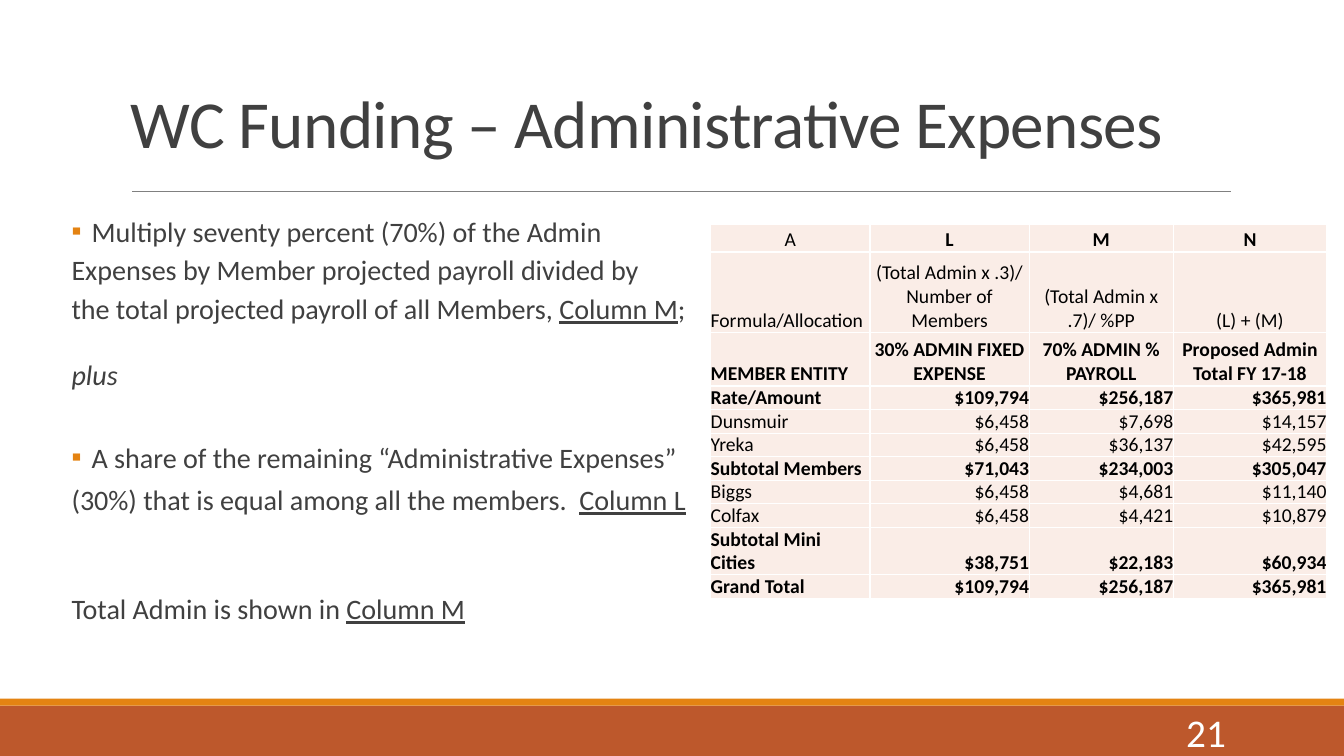
from dataclasses import dataclass

from lxml import etree
from pptx import Presentation, util as u
from pptx.dml.color import RGBColor
from pptx.enum import shapes, text
from pptx.oxml import ns


@dataclass(frozen=True)
class Theme:
    font: str = "Calibri"
    ink: str = "404040"
    black: str = "000000"
    white: str = "FFFFFF"
    rule: str = "808080"
    rust: str = "BD582C"
    orange: str = "E48312"
    blush: str = "FAEDE7"
    title_size: float = 48
    body_size: float = 20.1
    table_size: float = 14
    number_size: float = 28


THEME = Theme()
WIDTH, HEIGHT = u.Inches(13.333), u.Inches(7.5)
ALIGN = text.PP_ALIGN
ANCHOR = text.MSO_ANCHOR

COLUMN_SHARES = (11.85, 11.85, 10.73, 11.4)
HEADER_ROW_SHARES = (3.6, 10.67, 7.07)
DATA_ROW_SHARE = 1.73

ALLOCATION = (
    (False, ("A", "L", "M", "N")),
    (False, ("Formula/Allocation", "(Total Admin x .3)/ Number of Members",
             "(Total Admin x .7)/ %PP", "(L) + (M)")),
    (True, ("MEMBER ENTITY", "30% ADMIN FIXED EXPENSE",
            "70% ADMIN % PAYROLL", "Proposed Admin Total FY 17-18")),
    (True, ("Rate/Amount", "$109,794", "$256,187", "$365,981")),
    (False, ("Dunsmuir", "$6,458", "$7,698", "$14,157")),
    (False, ("Yreka", "$6,458", "$36,137", "$42,595")),
    (True, ("Subtotal Members", "$71,043", "$234,003", "$305,047")),
    (False, ("Biggs", "$6,458", "$4,681", "$11,140")),
    (False, ("Colfax", "$6,458", "$4,421", "$10,879")),
    (True, ("Subtotal Mini Cities", "$38,751", "$22,183", "$60,934")),
    (True, ("Grand Total", "$109,794", "$256,187", "$365,981")),
)

EXPLANATION = (
    (True, 0.9, 2, (("Multiply seventy percent (70%) of the Admin", ""),)),
    (False, 0.9, 2, (("Expenses by Member projected payroll divided by", ""),)),
    (False, 0.9, 2, (("the total projected payroll of all Members, ", ""),
                     ("Column M", "underline"), (";", ""))),
    (False, 0.7, 25, (("plus", "italic"),)),
    (True, 1.0, 32, (("A share of the remaining “Administrative Expenses”", ""),)),
    (False, 1.0, 2, (("(30%) that is equal among all the members.  ", ""),
                     ("Column L", "underline"))),
    (False, 0.7, 56, (("Total Admin is shown in ", ""),
                      ("Column M", "underline"))),
)


def across(share):
    return round(WIDTH * share / 100)


def down(share):
    return round(HEIGHT * share / 100)


def place(left, top, width, height):
    return across(left), down(top), across(width), down(height)


def colour(value):
    return RGBColor.from_string(value)


def add_span(para, words, size, tint, style=""):
    span = para.add_run()
    span.text = words
    span.font.name = THEME.font
    span.font.size = u.Pt(size)
    span.font.color.rgb = colour(tint)
    if style:
        setattr(span.font, style, True)
    return span


def add_box(page, area, anchor):
    box = page.shapes.add_textbox(*place(*area))
    box.text_frame.word_wrap = True
    box.text_frame.vertical_anchor = anchor
    return box.text_frame


def add_band(page, area, tint):
    band = page.shapes.add_shape(shapes.MSO_SHAPE.RECTANGLE, *place(*area))
    band.shadow.inherit = False
    band.fill.solid()
    band.fill.fore_color.rgb = colour(tint)
    band.line.fill.background()


def add_rule(page, start, end, level):
    rule = page.shapes.add_connector(
        shapes.MSO_CONNECTOR.STRAIGHT,
        across(start), down(level), across(end), down(level))
    rule.line.color.rgb = colour(THEME.rule)
    rule.line.width = u.Pt(0.5)
    etree.SubElement(rule.element.spPr, ns.qn("a:effectLst"))


def add_title(page, words):
    para = add_box(page, (9, 6.67, 82.5, 15.47), ANCHOR.BOTTOM).paragraphs[0]
    para.line_spacing = 0.85
    span = add_span(para, words, THEME.title_size, THEME.ink)
    span.font._element.set("spc", "-50")


def indent(para, bulleted):
    properties = para._p.get_or_add_pPr()
    properties.set("marL", str(u.Inches(0.42 if bulleted else 0.22)))
    properties.set("indent", str(u.Inches(-0.2 if bulleted else 0)))
    if bulleted:
        tint = etree.SubElement(properties, ns.qn("a:buClr"))
        etree.SubElement(tint, ns.qn("a:srgbClr"), val=THEME.orange)
        etree.SubElement(properties, ns.qn("a:buFont"), typeface=THEME.font)
        etree.SubElement(properties, ns.qn("a:buChar"), char="▪")


def add_explanation(page):
    frame = add_box(page, (3.67, 24.93, 68.33, 61.33), ANCHOR.TOP)
    frame.margin_left = frame.margin_right = 0
    frame.margin_top = down(3.87)
    for index, (bulleted, spacing, before, spans) in enumerate(EXPLANATION):
        para = frame.add_paragraph() if index else frame.paragraphs[0]
        para.line_spacing = spacing
        para.space_before = u.Pt(before if index else 0)
        para.space_after = u.Pt(4)
        indent(para, bulleted)
        for words, style in spans:
            add_span(para, words, THEME.body_size, THEME.ink, style)


def style_cell(cell):
    cell.margin_left = cell.margin_right = 0
    cell.margin_top = cell.margin_bottom = 0
    cell.vertical_anchor = ANCHOR.BOTTOM
    properties = cell._tc.get_or_add_tcPr()
    for side in ("lnL", "lnR", "lnT", "lnB"):
        border = etree.SubElement(properties, ns.qn(f"a:{side}"), w=str(u.Pt(1)))
        fill = etree.SubElement(border, ns.qn("a:solidFill"))
        etree.SubElement(fill, ns.qn("a:srgbClr"), val=THEME.white)
    cell.fill.solid()
    cell.fill.fore_color.rgb = colour(THEME.blush)


def cell_alignment(row, column):
    if row == 0 or (column and row < len(HEADER_ROW_SHARES)):
        return ALIGN.CENTER
    return ALIGN.RIGHT if column else ALIGN.LEFT


def add_allocation(page):
    area = place(52.88, 29.73, sum(COLUMN_SHARES), 49.33)
    holder = page.shapes.add_table(len(ALLOCATION), len(COLUMN_SHARES), *area)
    table = holder.table
    table.first_row = table.horz_banding = False
    for column, share in zip(table.columns, COLUMN_SHARES):
        column.width = across(share)
    data_rows = len(ALLOCATION) - len(HEADER_ROW_SHARES)
    row_shares = HEADER_ROW_SHARES + (DATA_ROW_SHARE,) * data_rows
    for row, share in zip(table.rows, row_shares):
        row.height = down(share)
    holder.height = area[3]
    for row, (bold, entries) in enumerate(ALLOCATION):
        for column, words in enumerate(entries):
            cell = table.cell(row, column)
            style_cell(cell)
            para = cell.text_frame.paragraphs[0]
            para.alignment = cell_alignment(row, column)
            strong = bold or (row == 0 and column > 0)
            add_span(para, words, THEME.table_size, THEME.black,
                     "bold" if strong else "")


def add_number(page, number):
    para = add_box(page, (81.22, 94.13, 10.73, 5.33), ANCHOR.MIDDLE).paragraphs[0]
    para.alignment = ALIGN.RIGHT
    add_span(para, number, THEME.number_size, THEME.white)


def main():
    deck = Presentation()
    deck.slide_width, deck.slide_height = WIDTH, HEIGHT
    page = deck.slides.add_slide(deck.slide_layouts[6])
    add_band(page, (0, 93.33, 100, 6.67), THEME.rust)
    add_band(page, (0, 92.4, 100, 0.93), THEME.orange)
    add_rule(page, 9.83, 91.58, 25.33)
    add_title(page, "WC Funding – Administrative Expenses")
    add_explanation(page)
    add_allocation(page)
    add_number(page, "21")
    deck.save("out.pptx")


if __name__ == "__main__":
    main()
